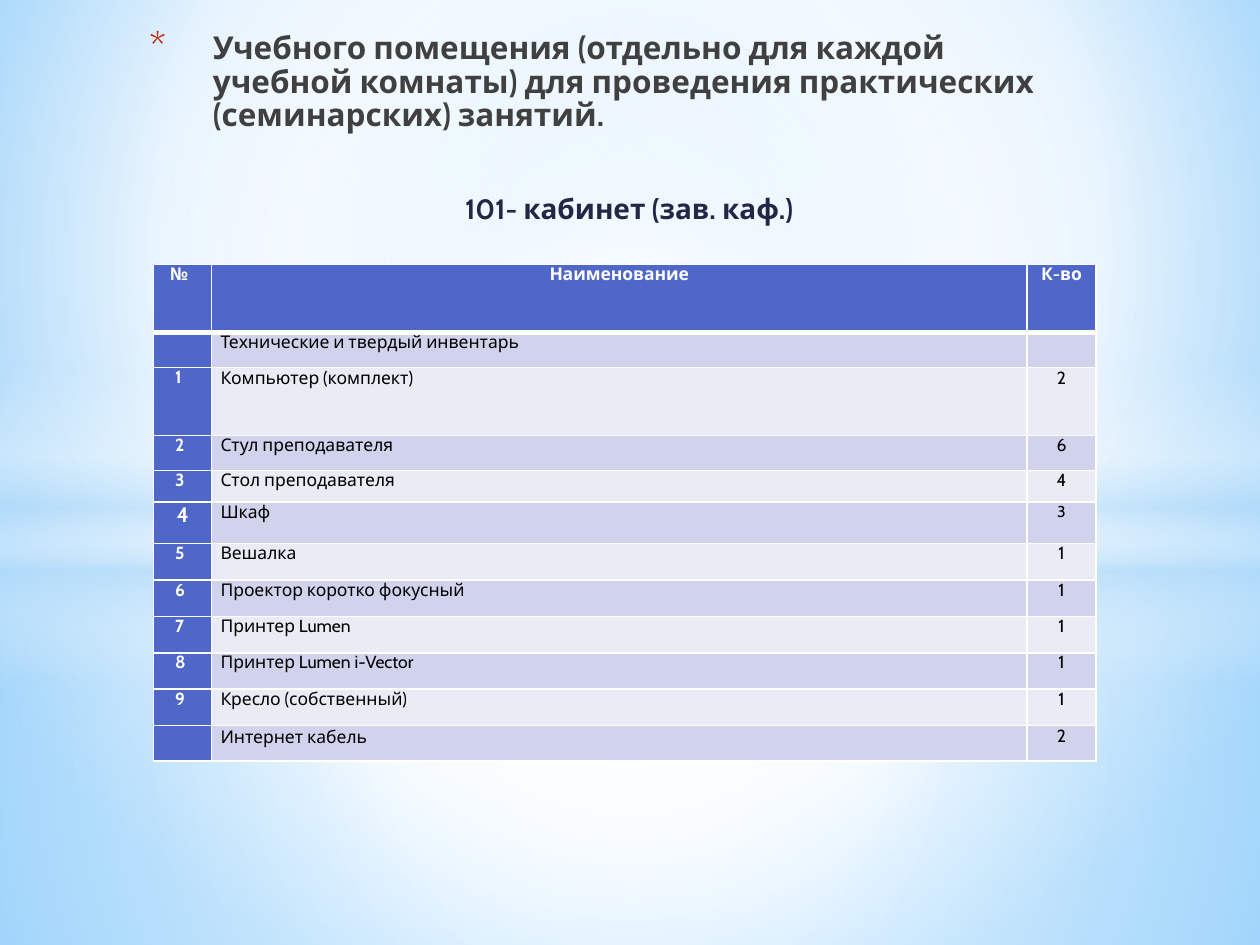
from lxml import etree
from pptx import Presentation
from pptx.dml.color import RGBColor
from pptx.enum.shapes import MSO_SHAPE
from pptx.enum.text import MSO_ANCHOR, MSO_AUTO_SIZE, PP_ALIGN
from pptx.oxml.ns import qn
from pptx.util import Inches, Pt

RECT, OVAL = MSO_SHAPE.RECTANGLE, MSO_SHAPE.OVAL
LEFT, CENTER = PP_ALIGN.LEFT, PP_ALIGN.CENTER
TOP = MSO_ANCHOR.TOP
FIT_NONE = MSO_AUTO_SIZE.NONE

FONT = "Cabin"
W, H = Inches(10), Inches(7.5)
C = {
    "white": "FFFFFF", "black": "000000", "title": "404040", "navy": "212745",
    "bullet": "C3260C", "header": "4E67C8", "odd": "D0D3EB", "even": "E9EBF5",
    "sky": "9ED5FF", "deep": "5BB9FF", "haze": "B4DCFA",
}
MIDDLE = (50, 50, 50, 50)
LAYERS = [
    (RECT, (0, 56.4, 100, 43.6), MIDDLE,
     [(0, "white", 91), (37, "white", 76), (100, "haze", 79)]),
    (RECT, (0, 0, 100, 56.4), MIDDLE,
     [(0, "white", 89), (48, "white", 62), (100, "haze", 79)]),
    (RECT, (0, 38.67, 100, 33.33), None,
     [(0, "white", 0), (29, "white", 30), (45, "haze", 40),
      (55, "white", 26), (65, "haze", 60), (100, "white", 0)]),
    (OVAL, (0, 23.33, 100, 74.4), MIDDLE,
     [(0, "white", 100), (54, "white", 0)]),
]
HEADER = ("№", "Наименование", "К-во")
ITEMS = [
    ("", "Технические и твердый инвентарь", ""),
    ("1", "Компьютер (комплект)", "2"),
    ("2", "Стул преподавателя", "6"),
    ("3", "Стол преподавателя", "4"),
    ("4", "Шкаф", "3"),
    ("5", "Вешалка", "1"),
    ("6", "Проектор коротко фокусный", "1"),
    ("7", "Принтер Lumen", "1"),
    ("8", "Принтер Lumen i-Vector", "1"),
    ("9", "Кресло (собственный)", "1"),
    ("", "Интернет кабель", "2"),
]
COLS = [0.46, 6.47, 0.55]
ROWS = [0.54, 0.28, 0.54, 0.28, 0.25, 0.33] + [0.29] * 5 + [0.28]
SIZES = {(5, 0): 12, (5, 2): 9}
SPACING = {(2, 1): None, (2, 2): 12.4, (5, 0): None, (5, 2): None,
           (11, 1): 12.6, (11, 2): None}


def rgb(name):
    return RGBColor.from_string(C[name])


def area(x, y, w, h):
    return [int(v / 100 * side) for v, side in zip((x, y, w, h), (W, H, W, H))]


def add(parent, tag, **attrs):
    return etree.SubElement(parent, qn(tag), {k: str(v) for k, v in attrs.items()})


def set_gradient(fill, root, stops, focus):
    fill.background()
    empty = root.find(".//" + qn("a:noFill"))
    grad = etree.Element(qn("a:gradFill"), rotWithShape="1")
    stop_list = add(grad, "a:gsLst")
    for pos, name, alpha in stops:
        stop = add(stop_list, "a:gs", pos=pos * 1000)
        color = add(stop, "a:srgbClr", val=C[name])
        if alpha < 100:
            add(color, "a:alpha", val=alpha * 1000)
    if focus:
        path = add(grad, "a:path", path="circle")
        add(path, "a:fillToRect", **{k: v * 1000 for k, v in zip("ltrb", focus)})
    else:
        add(grad, "a:lin", ang=90 * 60000, scaled=0)
    empty.getparent().replace(empty, grad)


def style(p, size, color, bold):
    for r in p.runs:
        r.font.name, r.font.size, r.font.bold = FONT, Pt(size), bold
        r.font.color.rgb = rgb(color)


def add_backdrop(s):
    set_gradient(s.background.fill, s.element,
                 [(0, "sky", 100), (60, "white", 100), (100, "deep", 100)],
                 (20, 10, 20, 60))
    for kind, box, focus, stops in LAYERS:
        sp = s.shapes.add_shape(kind, *area(*box))
        sp.shadow.inherit = False
        set_gradient(sp.fill, sp.element, stops, focus)
        sp.line.fill.background()


def add_subtitle(s, box):
    tf = s.shapes.add_textbox(*box).text_frame
    tf.word_wrap = True
    p = tf.paragraphs[0]
    p.text = "101- кабинет (зав. каф.)"
    p.alignment = CENTER
    style(p, 16, "navy", True)


def add_title(s, box):
    sp = s.shapes.title
    sp.left, sp.top, sp.width, sp.height = box
    sp.element.getparent().append(sp.element)
    tf = sp.text_frame
    tf.word_wrap, tf.auto_size, tf.vertical_anchor = True, FIT_NONE, TOP
    tf.margin_right = Inches(0.2)
    p = tf.paragraphs[0]
    p.text = ("Учебного помещения (отдельно для каждой учебной комнаты) "
              "для проведения практических (семинарских) занятий.")
    p.alignment, p.line_spacing, p.space_before = LEFT, 0.89, Pt(0)
    style(p, 18, "title", True)
    pPr = p._p.get_or_add_pPr()
    pPr.set("marL", str(Inches(0.7)))
    pPr.set("indent", str(Inches(-0.5)))
    add(add(pPr, "a:buClr"), "a:srgbClr", val=C["bullet"])
    add(pPr, "a:buSzPct", val=128000)
    add(pPr, "a:buFont", typeface=FONT)
    add(pPr, "a:buChar", char="*")


def set_borders(cell, row):
    widths = {"L": 1, "R": 1, "T": 3 if row == 1 else 1, "B": 3 if row == 0 else 1}
    tcPr = cell._tc.get_or_add_tcPr()
    for i, (side, width) in enumerate(widths.items()):
        ln = add(tcPr, "a:ln" + side, w=Pt(width))
        add(add(ln, "a:solidFill"), "a:srgbClr", val=C["white"])
        tcPr.insert(i, ln)


def fill_cell(cell, row, col, text):
    head = row == 0 or col == 0
    size = SIZES.get((row, col), 10)
    cell.margin_left = cell.margin_right = cell.margin_top = cell.margin_bottom = 0
    cell.fill.solid()
    cell.fill.fore_color.rgb = rgb("header" if head else "odd" if row % 2 else "even")
    set_borders(cell, row)
    p = cell.text_frame.paragraphs[0]
    if not text:
        add(p._p, "a:endParaRPr", sz=size * 100)
        return
    p.text = text
    style(p, size, "white" if head else "black", head)
    spacing = SPACING.get((row, col), 11.7)
    if spacing:
        p.line_spacing = Pt(spacing)
    if col == 2 or (row, col) in ((0, 1), (5, 0)):
        p.alignment = CENTER
    else:
        indent = 0.07 if col else 0.17 if row else 0.13
        p._p.get_or_add_pPr().set("marL", str(Inches(indent)))


def add_inventory(s, box):
    data = [HEADER] + ITEMS
    table = s.shapes.add_table(len(data), len(COLS), *box).table
    for column, share in zip(table.columns, COLS):
        column.width = int(box[2] * share / sum(COLS))
    for i, (row, share) in enumerate(zip(table.rows, ROWS)):
        row.height = int(box[3] * share / sum(ROWS))
        for j, text in enumerate(data[i]):
            fill_cell(table.cell(i, j), i, j, text)


def main():
    prs = Presentation()
    prs.slide_width, prs.slide_height = W, H
    s = prs.slides.add_slide(prs.slide_layouts[5])
    add_backdrop(s)
    add_subtitle(s, area(9.8, 19.6, 80.3, 66.93))
    add_title(s, area(8.9, 2.8, 78.5, 17.87))
    add_inventory(s, area(12.2, 28, 74.8, 52.53))
    prs.save("out.pptx")


if __name__ == "__main__":
    main()
